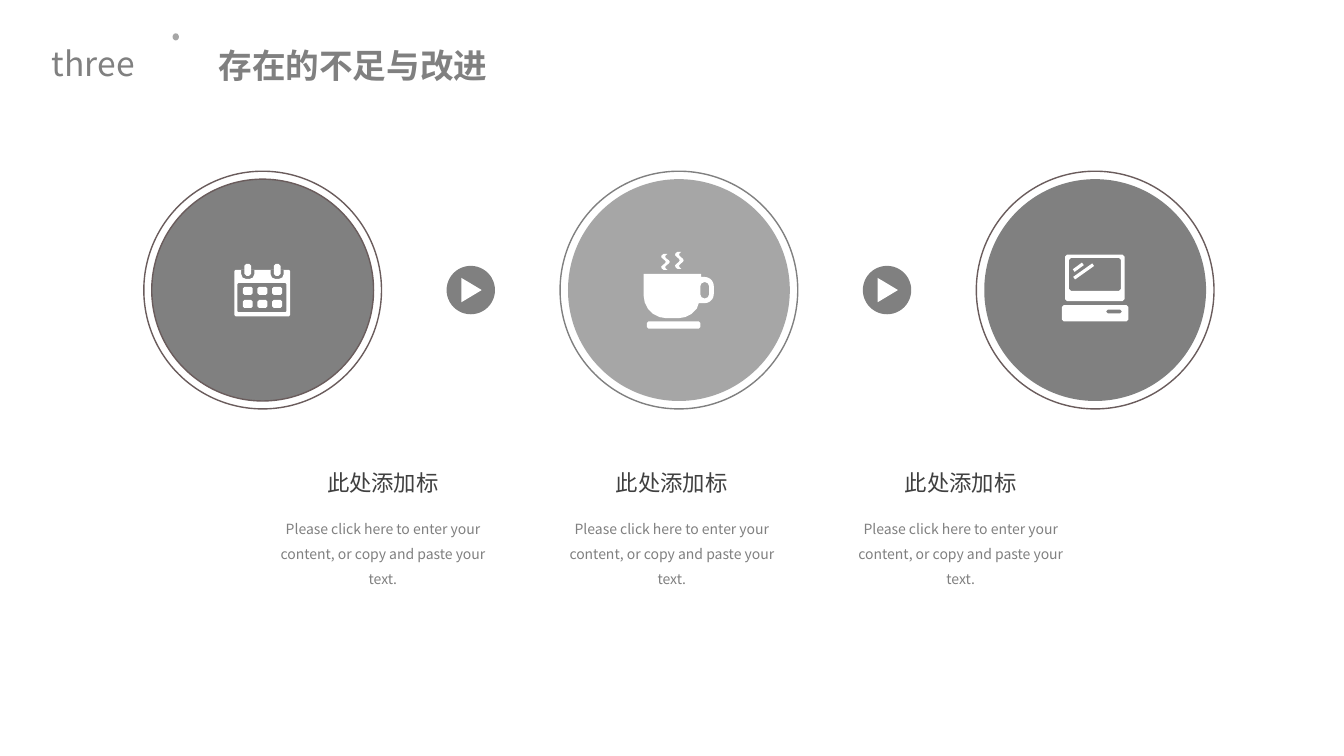
import math

from lxml import etree
from pptx import Presentation
from pptx import util as u
from pptx.dml.color import RGBColor
from pptx.enum import shapes, text
from pptx.oxml.ns import qn

GRAY = RGBColor(0x80, 0x80, 0x80)
SILVER = RGBColor(0xA6, 0xA6, 0xA6)
MAUVE = RGBColor(0x6A, 0x5C, 0x5C)
INK = RGBColor(0x40, 0x40, 0x40)
WHITE = RGBColor(0xFF, 0xFF, 0xFF)
FONT = "Noto Sans CJK SC"

DISC = 5.59
RING = 5.99


def paint(shape, fill=None, outline=None):
    shape.shadow.inherit = False
    if fill is None:
        shape.fill.background()
    else:
        shape.fill.solid()
        shape.fill.fore_color.rgb = fill
    if outline is None:
        shape.line.fill.background()
    else:
        shape.line.color.rgb = outline
        shape.line.width = u.Pt(1)


def add_centred(slide, preset, cx, cy, w, h, fill=None, outline=None):
    shape = slide.shapes.add_shape(
        preset, u.Cm(cx - w / 2), u.Cm(cy - h / 2), u.Cm(w), u.Cm(h))
    paint(shape, fill, outline)
    return shape


def write(label, words, size, color, align=text.PP_ALIGN.CENTER, bold=False, wrap=True):
    label.text_frame.word_wrap = wrap
    paragraph = label.text_frame.paragraphs[0]
    paragraph.text = words
    paragraph.alignment = align
    font = paragraph.font
    font.name, font.size, font.bold = FONT, u.Pt(size), bold
    font.color.rgb = color
    defaults = paragraph._p.pPr.find(qn("a:defRPr"))
    etree.SubElement(defaults, qn("a:ea"), typeface=FONT)
    return label.text_frame


def add_words(slide, box, words, size, color, wrap=True):
    label = slide.shapes.add_textbox(*map(u.Cm, box))
    return write(label, words, size, color, wrap=wrap)


def corner(cx, cy, radius, start):
    if not radius:
        return [(cx, cy)]
    pieces = 1 if radius < 0.1 else 2 if radius < 0.2 else 5
    angles = [math.radians(start + 90 * i / pieces) for i in range(pieces + 1)]
    return [(cx + radius * math.cos(a), cy + radius * math.sin(a)) for a in angles]


def rounded(x, y, w, h, bottom, top=None):
    top = bottom if top is None else top
    return (corner(x + w - top, y + top, top, -90)
            + corner(x + w - bottom, y + h - bottom, bottom, 0)
            + corner(x + bottom, y + h - bottom, bottom, 90)
            + corner(x + top, y + top, top, 180))


def steam(cx, cy, height):
    spine = [(cx - 0.06 * math.sin(3 * math.pi * i / 10), cy + height * (i / 10 - 0.5))
             for i in range(11)]
    return [(x - 0.05, y) for x, y in spine] + [(x + 0.05, y) for x, y in reversed(spine)]


def glare(x1, y1, x2, y2):
    length = math.hypot(x2 - x1, y2 - y1)
    dx, dy = 0.04 * (y1 - y2) / length, 0.04 * (x2 - x1) / length
    return [(x1 - dx, y1 - dy), (x2 - dx, y2 - dy), (x2 + dx, y2 + dy), (x1 + dx, y1 + dy)]


def add_outline(slide, cx, cy, *contours, fill=WHITE):
    placed = [[(u.Cm(cx + x), u.Cm(cy + y)) for x, y in contour] for contour in contours]
    builder = slide.shapes.build_freeform(*placed[0][0])
    for index, contour in enumerate(placed):
        if index:
            builder.move_to(*contour[0])
        builder.add_line_segments(contour[1:], close=True)
    outline = builder.convert_to_shape()
    paint(outline, fill)
    return outline


def draw_calendar(slide, cx, cy):
    for column in range(3):
        for row in range(2):
            add_outline(slide, cx, cy, rounded(
                -0.5 + 0.37 * column, -0.08 + 0.33 * row, 0.25, 0.2, 0.04))
    ring_lefts = (-0.46, 0.28)
    for x in ring_lefts:
        add_outline(slide, cx, cy, rounded(x, -0.66, 0.17, 0.3, 0.05))
    notches = [rounded(x - 0.08, -0.51, 0.33, 0.23, 0.12, 0) for x in ring_lefts]
    add_outline(slide, cx, cy, rounded(-0.71, -0.51, 1.4, 1.17, 0.03),
                rounded(-0.64, -0.18, 1.24, 0.74, 0.03), *notches)


def bowl_with_handle():
    bowl_left, bowl_right, rim, foot, curve = -0.89, 0.56, -0.41, 0.71, 0.58
    handle = (corner(0.65, -0.1, 0.23, -90) + corner(0.65, 0.1, 0.23, 0))
    return ([(bowl_left, rim), (bowl_right, rim), (bowl_right, -0.33)] + handle
            + [(0.5, 0.33)] + corner(bowl_right - curve, foot - curve, curve, 0)[2:]
            + corner(bowl_left + curve, foot - curve, curve, 90))


def draw_cup(slide, cx, cy):
    add_outline(slide, cx, cy, bowl_with_handle(), rounded(0.54, -0.2, 0.22, 0.41, 0.1))
    for part in (rounded(-0.81, 0.79, 1.35, 0.18, 0.04),
                 steam(-0.34, -0.71, 0.4), steam(0.01, -0.75, 0.43)):
        add_outline(slide, cx, cy, part)


def draw_computer(slide, cx, cy):
    add_outline(slide, cx, cy, rounded(-0.84, 0.38, 1.68, 0.41, 0.05),
                rounded(0.28, 0.49, 0.39, 0.1, 0.04))
    add_outline(slide, cx, cy, rounded(-0.76, -0.89, 1.5, 1.17, 0.05),
                rounded(-0.66, -0.81, 1.31, 0.83, 0.05))
    add_outline(slide, cx, cy, glare(-0.54, -0.49, -0.31, -0.66))
    add_outline(slide, cx, cy, glare(-0.53, -0.3, -0.05, -0.64))


def add_header(slide, left, top):
    add_centred(slide, shapes.MSO_SHAPE.OVAL, left + 3.41, top + 0.09, 0.16, 0.18, SILVER)
    add_words(slide, (left + 0.02, top + 0.12, 2.62, 1.27), "three", 24, GRAY, wrap=False)
    banner = add_outline(slide, left + 3.8, top, rounded(0, 0, 12.27, 1.73, 0), fill=None)
    title = write(banner, "存在的不足与改进", 24, GRAY, text.PP_ALIGN.JUSTIFY, bold=True)
    title.vertical_anchor = text.MSO_ANCHOR.MIDDLE
    title.margin_left, title.margin_right = u.Cm(0.69), u.Cm(0.76)
    title.margin_top = title.margin_bottom = u.Cm(0.43)
    title.paragraphs[0].line_spacing = 0.9


def add_steps(slide, first_x, cy, pitch):
    steps = [(GRAY, MAUVE, MAUVE, draw_calendar),
             (SILVER, None, GRAY, draw_cup),
             (GRAY, None, MAUVE, draw_computer)]
    for index, (fill, edge, ring, draw_icon) in enumerate(steps):
        cx = first_x + index * pitch
        add_centred(slide, shapes.MSO_SHAPE.OVAL, cx, cy, DISC, DISC, fill, edge)
        add_centred(slide, shapes.MSO_SHAPE.OVAL, cx, cy, RING, RING, outline=ring)
        draw_icon(slide, cx, cy)
        if index < len(steps) - 1:
            middle = cx + pitch / 2
            add_centred(slide, shapes.MSO_SHAPE.OVAL, middle, cy, 1.22, 1.22, GRAY)
            pointer = add_centred(slide, shapes.MSO_SHAPE.ISOSCELES_TRIANGLE,
                                  middle + 0.02, cy, 0.61, 0.51, WHITE)
            pointer.rotation = 90


def add_captions(slide, left, top, width, pitch):
    for index in range(3):
        x = left + index * pitch
        add_words(slide, (x + 1.21, top, width - 2.42, 0.94), "此处添加标", 16, INK)
        body = add_words(
            slide, (x, top + 1.08, width, 2.11),
            "Please click here to enter your content, or copy and paste your text.", 10, GRAY)
        body.paragraphs[0].line_spacing = u.Pt(18)


def main():
    deck = Presentation()
    deck.slide_width, deck.slide_height = u.Cm(33.87), u.Cm(19.05)
    slide = deck.slides.add_slide(deck.slide_layouts[6])
    add_header(slide, 1.02, 0.84)
    add_steps(slide, 6.62, 7.31, 10.49)
    add_captions(slide, 6.55, 11.7, 6.2, 7.28)
    deck.save("out.pptx")


if __name__ == "__main__":
    main()
